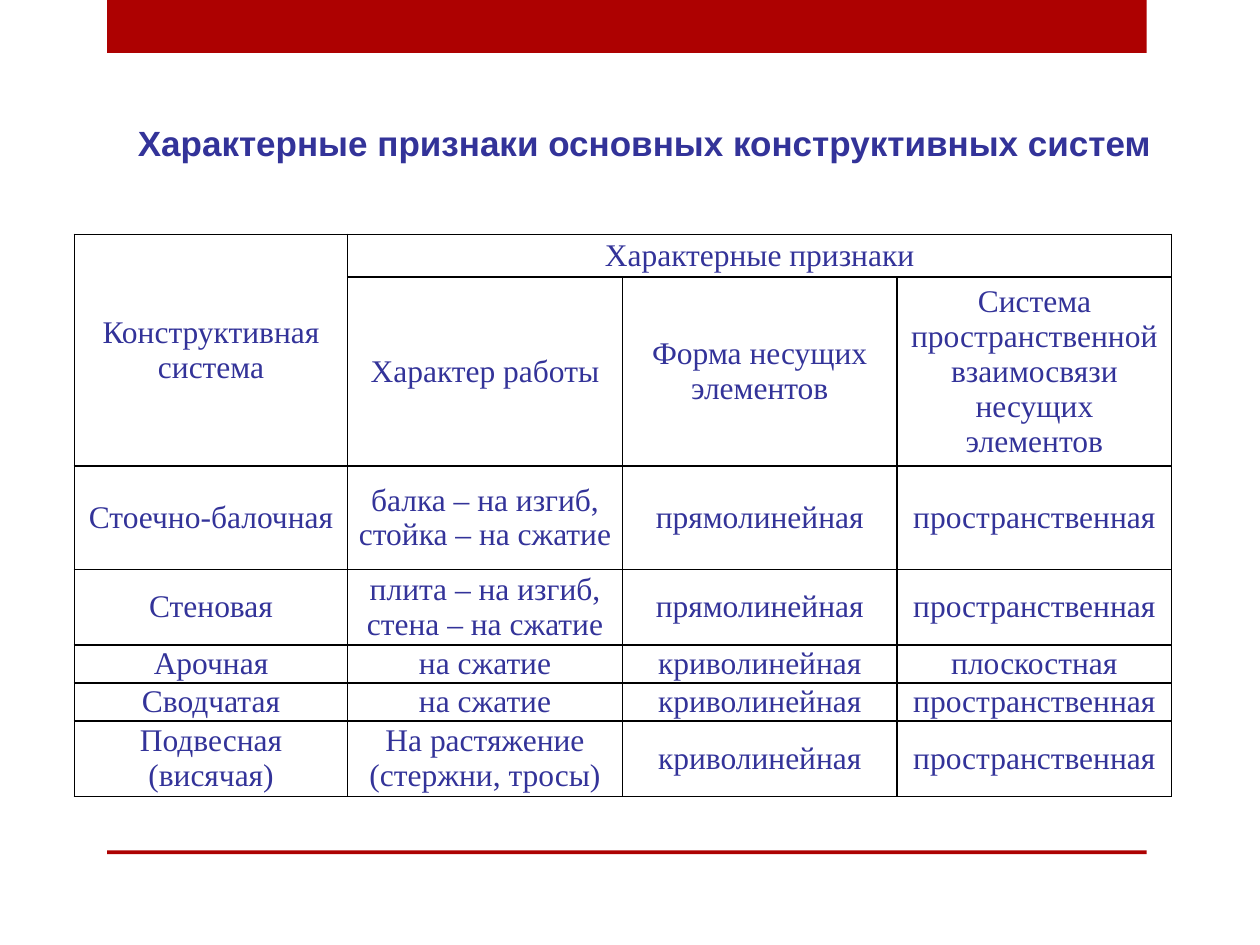
from dataclasses import dataclass

from lxml.etree import SubElement
from pptx import Presentation
from pptx.dml.color import RGBColor
from pptx.enum.shapes import MSO_SHAPE
from pptx.enum.text import MSO_ANCHOR, MSO_AUTO_SIZE, PP_ALIGN
from pptx.oxml.ns import qn
from pptx.util import Inches, Pt


@dataclass(frozen=True)
class Theme:
    accent: RGBColor = RGBColor(0xAD, 0x01, 0x01)
    text: RGBColor = RGBColor(0x33, 0x33, 0x99)
    border: str = "000000"
    border_width: int = Pt(1)
    title_font: str = "Arial"
    table_font: str = "Times New Roman"
    title_size: int = Pt(20)
    table_size: int = Pt(18)


@dataclass(frozen=True)
class Bar:
    top: float
    height: float


THEME = Theme()
BARS = [Bar(0, 0.42), Bar(6.75, 0.03)]
COL_WIDTHS = [2.17, 2.18, 2.18, 2.18]
ROW_HEIGHTS = [0.34, 1.5, 0.82, 0.6, 0.3, 0.3, 0.6]
ROWS = [
    ["Конструктивная система", "Характерные признаки", "", ""],
    ["", "Характер работы", "Форма несущих элементов",
     "Система пространственной взаимосвязи несущих элементов"],
    ["Стоечно-балочная", "балка – на изгиб, стойка – на сжатие",
     "прямолинейная", "пространственная"],
    ["Стеновая", "плита – на изгиб, стена – на сжатие",
     "прямолинейная", "пространственная"],
    ["Арочная", "на сжатие", "криволинейная", "плоскостная"],
    ["Сводчатая", "на сжатие", "криволинейная", "пространственная"],
    ["Подвесная (висячая)", "На растяжение\n(стержни, тросы)",
     "криволинейная", "пространственная"],
]


def set_attrs(obj, values: dict) -> None:
    for name, value in values.items():
        setattr(obj, name, value)


def set_font(font, **values) -> None:
    set_attrs(font, values)
    font.color.rgb = THEME.text


def draw_bar(slide, bar: Bar) -> None:
    sp = slide.shapes.add_shape(MSO_SHAPE.RECTANGLE, Inches(0.85), Inches(bar.top),
                                Inches(8.25), Inches(bar.height))
    sp.shadow.inherit = False
    sp.fill.solid()
    sp.fill.fore_color.rgb = THEME.accent
    sp.line.fill.background()


def draw_title(slide, text: str) -> None:
    sp = slide.shapes.title
    set_attrs(sp, {"left": Inches(0.43), "top": Inches(0.91),
                   "width": Inches(8.81), "height": Inches(0.44)})
    tf = sp.text_frame
    tf.text = text
    set_attrs(tf, {"word_wrap": False, "auto_size": MSO_AUTO_SIZE.SHAPE_TO_FIT_TEXT,
                   "vertical_anchor": MSO_ANCHOR.MIDDLE})
    p = tf.paragraphs[0]
    p.alignment = PP_ALIGN.RIGHT
    p._p.get_or_add_pPr().set("indent", str(Inches(0.49)))
    set_font(p.runs[0].font, name=THEME.title_font, size=THEME.title_size, bold=True)


def add_borders(cell) -> None:
    tc_pr = cell._tc.get_or_add_tcPr()
    for side in ("a:lnL", "a:lnR", "a:lnT", "a:lnB"):
        ln = SubElement(tc_pr, qn(side), w=str(THEME.border_width))
        fill = SubElement(ln, qn("a:solidFill"))
        SubElement(fill, qn("a:srgbClr"), val=THEME.border)


def format_cell(cell, text: str) -> None:
    cell.text = text
    set_attrs(cell, {"margin_left": Inches(0.07), "margin_right": Inches(0.07),
                     "margin_top": 0, "margin_bottom": 0,
                     "vertical_anchor": MSO_ANCHOR.MIDDLE})
    for p in cell.text_frame.paragraphs:
        p.alignment = PP_ALIGN.CENTER
        set_font(p.font, name=THEME.table_font, size=THEME.table_size, bold=False)
        for r in p.runs:
            set_font(r.font, name=THEME.table_font, size=THEME.table_size, bold=False)
    add_borders(cell)
    cell.fill.background()


def draw_table(slide) -> None:
    table = slide.shapes.add_table(
        len(ROWS), len(COL_WIDTHS), Inches(0.59), Inches(1.86),
        Inches(sum(COL_WIDTHS)), Inches(sum(ROW_HEIGHTS))).table
    set_attrs(table, {"first_row": False, "horz_banding": False})
    for col, width in zip(table.columns, COL_WIDTHS):
        col.width = Inches(width)
    for row, height, texts in zip(table.rows, ROW_HEIGHTS, ROWS):
        row.height = Inches(height)
        for cell, text in zip(row.cells, texts):
            format_cell(cell, text)
    table.cell(0, 0).merge(table.cell(1, 0))
    table.cell(0, 1).merge(table.cell(0, 3))


def main() -> None:
    prs = Presentation()
    set_attrs(prs, {"slide_width": Inches(10), "slide_height": Inches(7.5)})
    slide = prs.slides.add_slide(prs.slide_layouts[5])
    for bar in BARS:
        draw_bar(slide, bar)
    draw_table(slide)
    draw_title(slide, "Характерные признаки основных конструктивных систем")
    prs.save("out.pptx")


if __name__ == "__main__":
    main()
